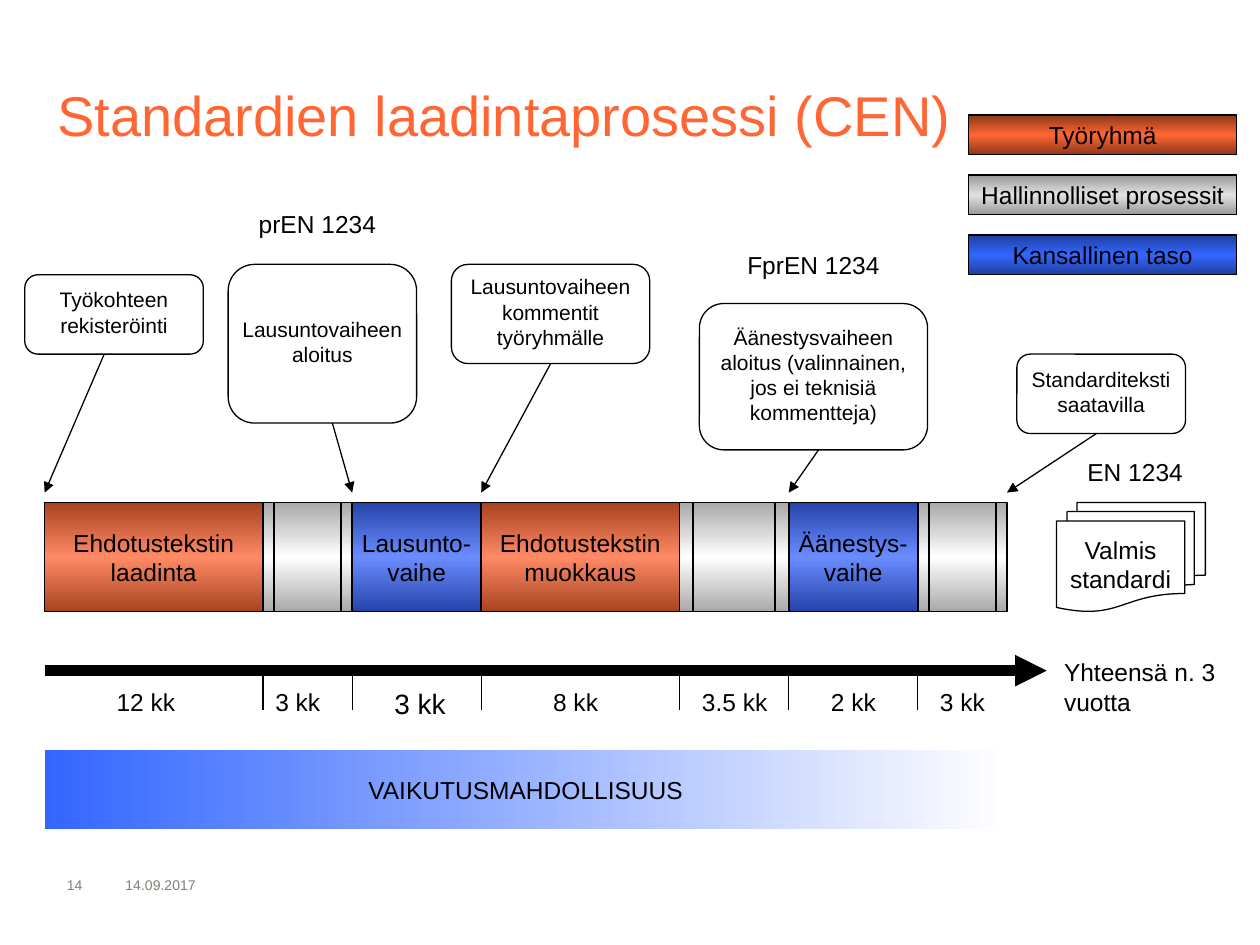
from copy import deepcopy
from dataclasses import dataclass
from itertools import accumulate

from lxml import etree
from pptx import Presentation
from pptx.dml.color import RGBColor
from pptx.enum.shapes import MSO_CONNECTOR, MSO_SHAPE
from pptx.enum.text import MSO_ANCHOR, PP_ALIGN
from pptx.oxml.ns import qn
from pptx.util import Cm, Pt

LEFT, CENTER = PP_ALIGN.LEFT, PP_ALIGN.CENTER
TOP, MIDDLE, BOTTOM = MSO_ANCHOR.TOP, MSO_ANCHOR.MIDDLE, MSO_ANCHOR.BOTTOM
RECTANGLE = MSO_SHAPE.RECTANGLE
PROCESS = MSO_SHAPE.FLOWCHART_PROCESS
ADMIN_PROCESS = MSO_SHAPE.FLOWCHART_PREDEFINED_PROCESS
CALLOUT = MSO_SHAPE.FLOWCHART_ALTERNATE_PROCESS
DOCUMENTS = MSO_SHAPE.FLOWCHART_MULTIDOCUMENT
STRAIGHT = MSO_CONNECTOR.STRAIGHT


@dataclass(frozen=True)
class Theme:
    font: str = "Arial"
    title: str = "FF6633"
    ink: str = "000000"
    paper: str = "FFFFFF"
    muted: str = "817F77"
    title_size: float = 32
    month_size: float = 16
    label_size: float = 14
    callout_size: float = 12
    footer_size: float = 8
    thin: float = 0.75
    medium: float = 1
    thick: float = 6
    group: tuple = ("A84320", "FF8A66", "A84320")
    admin: tuple = ("A9A9A9", "FFFFFF", "A9A9A9")
    national: tuple = ("2444AA", "6A8CFF", "2444AA")
    group_key: tuple = ("8C3819", "FF6633", "8C3819")
    admin_key: tuple = ("999999", "E2E2E2", "999999")
    national_key: tuple = ("1E3F9E", "3366FF", "1E3F9E")
    influence: tuple = ("3366FF", "FFFFFF")


THEME = Theme()
CHART_LEFT, BAND_TOP, BAND_HEIGHT = 0.9, 10.13, 2.2
AXIS_Y, TICK_LENGTH, MONTH_TOP = 13.52, 0.8, 13.72
LEADER_END = 9.93

STAGES = [
    (4.4, PROCESS, THEME.group, "Ehdotustekstin\nlaadinta"),
    (1.8, ADMIN_PROCESS, THEME.admin, ""),
    (2.6, PROCESS, THEME.national, "Lausunto-\vvaihe"),
    (4.0, PROCESS, THEME.group, "Ehdotustekstin\vmuokkaus"),
    (2.2, ADMIN_PROCESS, THEME.admin, ""),
    (2.6, RECTANGLE, THEME.national, "Äänestys-\vvaihe"),
    (1.8, ADMIN_PROCESS, THEME.admin, ""),
]
EDGES = list(accumulate((stage[0] for stage in STAGES), initial=CHART_LEFT))
MONTHS = [
    (2.1, 2.0, "12 kk", THEME.label_size),
    (5.3, 2.2, "3 kk", THEME.label_size),
    (7.7, 1.6, "3 kk", THEME.month_size),
    (10.9, 1.6, "8 kk", THEME.label_size),
    (13.9, 2.0, "3.5 kk", THEME.label_size),
    (16.5, 1.6, "2 kk", THEME.label_size),
    (18.7, 1.6, "3 kk", THEME.label_size),
]
CALLOUTS = [
    ((0.5, 5.54, 3.6, 1.6), 2.1, 0, "Työkohteen\nrekisteröinti"),
    ((4.6, 5.33, 3.8, 3.2), 6.7, 2, "Lausuntovaiheen\naloitus"),
    ((9.1, 5.33, 4.0, 2.0), 11.1, 3, "Lausuntovaiheen\nkommentit\ntyöryhmälle"),
    ((14.1, 6.12, 4.6, 2.95), 16.5, 5,
     "Äänestysvaiheen\naloitus (valinnainen,\njos ei teknisiä\nkommentteja)"),
    ((20.5, 7.14, 3.4, 1.6), 22.1, 7, "Standarditeksti\nsaatavilla"),
]
LEGEND = [
    ("Työryhmä", THEME.group_key),
    ("Hallinnolliset prosessit", THEME.admin_key),
    ("Kansallinen taso", THEME.national_key),
]
DOCUMENT_NAMES = [
    ((4.95, 4.09, 2.9, 0.86), "prEN 1234"),
    ((14.8, 4.9, 3.2, 0.86), "FprEN 1234"),
    ((21.66, 9.07, 2.45, 0.86), "EN 1234"),
]
FOOTERS = [((1.1, 17.53, 1.2, 0.6), "14"), ((2.28, 17.53, 2.8, 0.6), "14.09.2017")]


def apply_format(target, values):
    for name, value in values.items():
        setattr(target, name, value)


def write_text(box, text, size, color=THEME.ink, align=CENTER, anchor=MIDDLE,
               wrap=False, spacing=None):
    frame = box.text_frame
    frame.text = text
    apply_format(frame, {"word_wrap": wrap, "vertical_anchor": anchor})
    for para in frame.paragraphs:
        apply_format(para, {"alignment": align, **(spacing or {})})
        apply_format(para.font, {"name": THEME.font, "size": Pt(size)})
        para.font.color.rgb = RGBColor.from_string(color)


def add_label(page, place, text, size=THEME.label_size, **options):
    box = page.shapes.add_textbox(*map(Cm, place))
    write_text(box, text, size, **options)


def set_gradient(shape, colors, angle):
    fill = shape.fill
    fill.gradient()
    fill.gradient_angle = angle
    stop_list = next(shape.element.spPr.iter(qn("a:gsLst")))
    for _ in colors[2:]:
        stop_list.append(deepcopy(stop_list[-1]))
    for index, (stop, color) in enumerate(zip(fill.gradient_stops, colors)):
        stop.position = index / (len(colors) - 1)
        stop.color.rgb = RGBColor.from_string(color)


def add_box(page, kind, place, text="", colors=(), angle=90, line=THEME.thin,
            size=THEME.label_size, spacing=None):
    shape = page.shapes.add_shape(kind, *map(Cm, place))
    shape.shadow.inherit = False
    if len(colors) > 1:
        set_gradient(shape, colors, angle)
    elif colors:
        shape.fill.solid()
        shape.fill.fore_color.rgb = RGBColor.from_string(colors[0])
    else:
        shape.fill.background()
    if line:
        shape.line.color.rgb = RGBColor.from_string(THEME.ink)
        shape.line.width = Pt(line)
    else:
        shape.line.fill.background()
    if text:
        write_text(shape, text, size, spacing=spacing)


def add_line(page, start, end, width=THEME.thin, arrow=False):
    line = page.shapes.add_connector(STRAIGHT, *map(Cm, (*start, *end)))
    line.line.color.rgb = RGBColor.from_string(THEME.ink)
    line.line.width = Pt(width)
    properties = line.element.spPr
    if arrow:
        etree.SubElement(properties.find(qn("a:ln")), qn("a:tailEnd"), type="triangle")
    etree.SubElement(properties, qn("a:effectLst"))


def add_title(page, text):
    title = page.shapes.title
    place = {"left": Cm(0.9), "top": Cm(0.7), "width": Cm(23.24), "height": Cm(2.4)}
    apply_format(title, place)
    write_text(title, text, THEME.title_size, THEME.title, LEFT, BOTTOM, wrap=True)


def add_legend(page):
    for index, (text, colors) in enumerate(LEGEND):
        add_box(page, RECTANGLE, (19.53, 2.32 + 1.21 * index, 5.4, 0.8), text, colors)


def add_stages(page):
    for left, (width, kind, colors, text) in zip(EDGES, STAGES):
        place = (left, BAND_TOP, width, BAND_HEIGHT)
        add_box(page, kind, place, text, colors, line=THEME.medium)
    add_box(page, DOCUMENTS, (21.3, BAND_TOP, 3.0, BAND_HEIGHT),
            "Valmis\vstandardi", (THEME.paper,))


def add_timeline(page):
    add_line(page, (CHART_LEFT, AXIS_Y), (21.1, AXIS_Y), THEME.thick, arrow=True)
    for edge in EDGES[1:-1]:
        add_line(page, (edge, AXIS_Y), (edge, AXIS_Y + TICK_LENGTH))
    options = {"align": LEFT, "anchor": TOP, "wrap": True}
    for left, width, text, size in MONTHS:
        add_label(page, (left, MONTH_TOP, width, 0.85), text, size, **options)
    add_label(page, (21.2, 13.13, 4.2, 1.45), "Yhteensä n. 3 vuotta", **options)


def add_callouts(page):
    spacing = {"line_spacing": 0.8, "space_after": Pt(2.8)}
    for place, leader_x, edge, text in CALLOUTS:
        add_box(page, CALLOUT, place, text, size=THEME.callout_size, spacing=spacing)
        bottom = place[1] + place[3]
        add_line(page, (leader_x, bottom), (EDGES[edge], LEADER_END), arrow=True)


def main():
    deck = Presentation()
    apply_format(deck, {"slide_width": Cm(25.4), "slide_height": Cm(19.05)})
    page = deck.slides.add_slide(deck.slide_layouts[5])
    add_title(page, "Standardien laadintaprosessi (CEN)")
    add_legend(page)
    add_stages(page)
    add_timeline(page)
    add_box(page, RECTANGLE, (CHART_LEFT, 15.12, EDGES[-1] - CHART_LEFT, 1.6),
            "VAIKUTUSMAHDOLLISUUS", THEME.influence, angle=0, line=None)
    add_callouts(page)
    for place, text in DOCUMENT_NAMES:
        add_label(page, place, text)
    for place, text in FOOTERS:
        add_label(page, place, text, THEME.footer_size, color=THEME.muted,
                  align=LEFT, wrap=True)
    deck.save("out.pptx")


if __name__ == "__main__":
    main()
